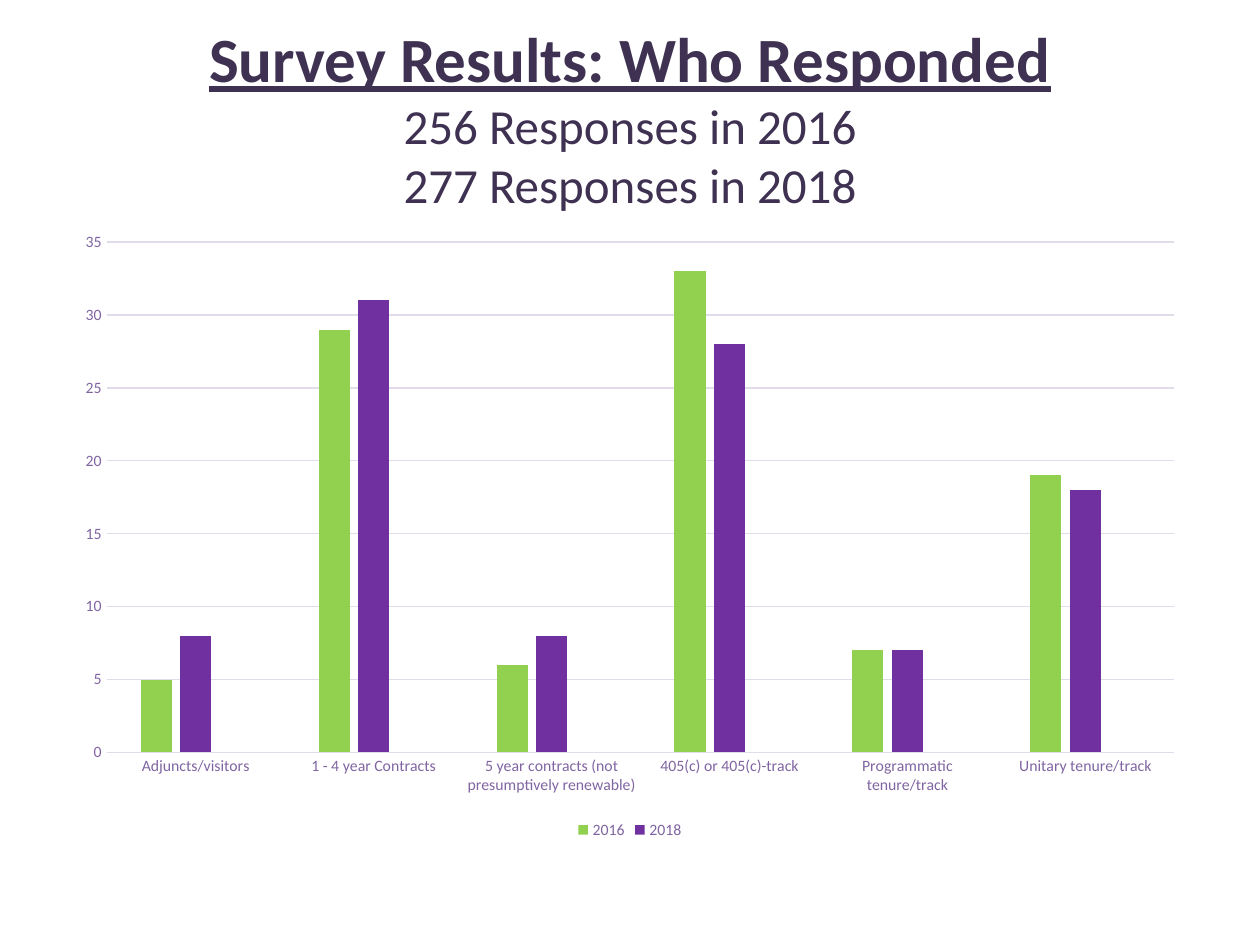
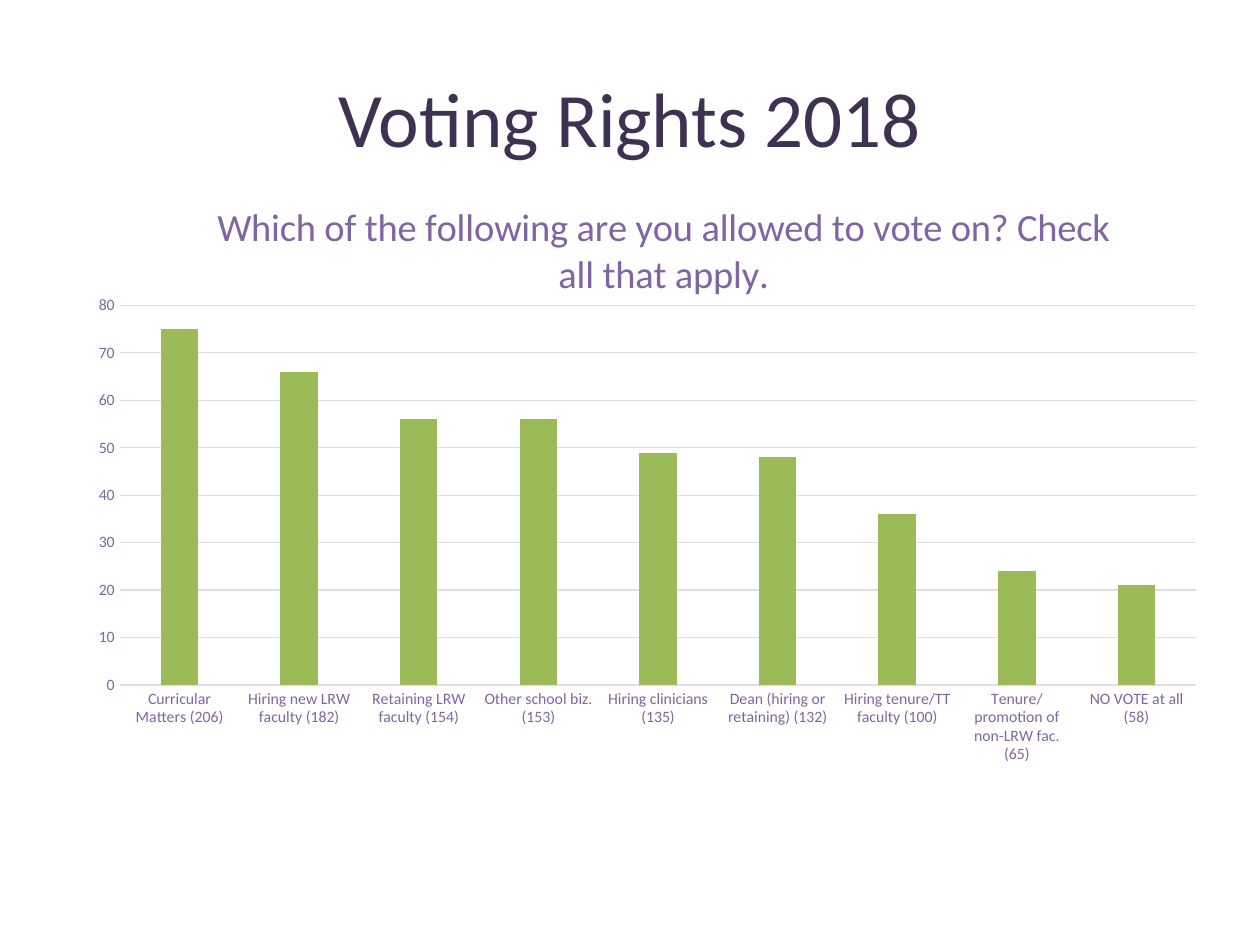
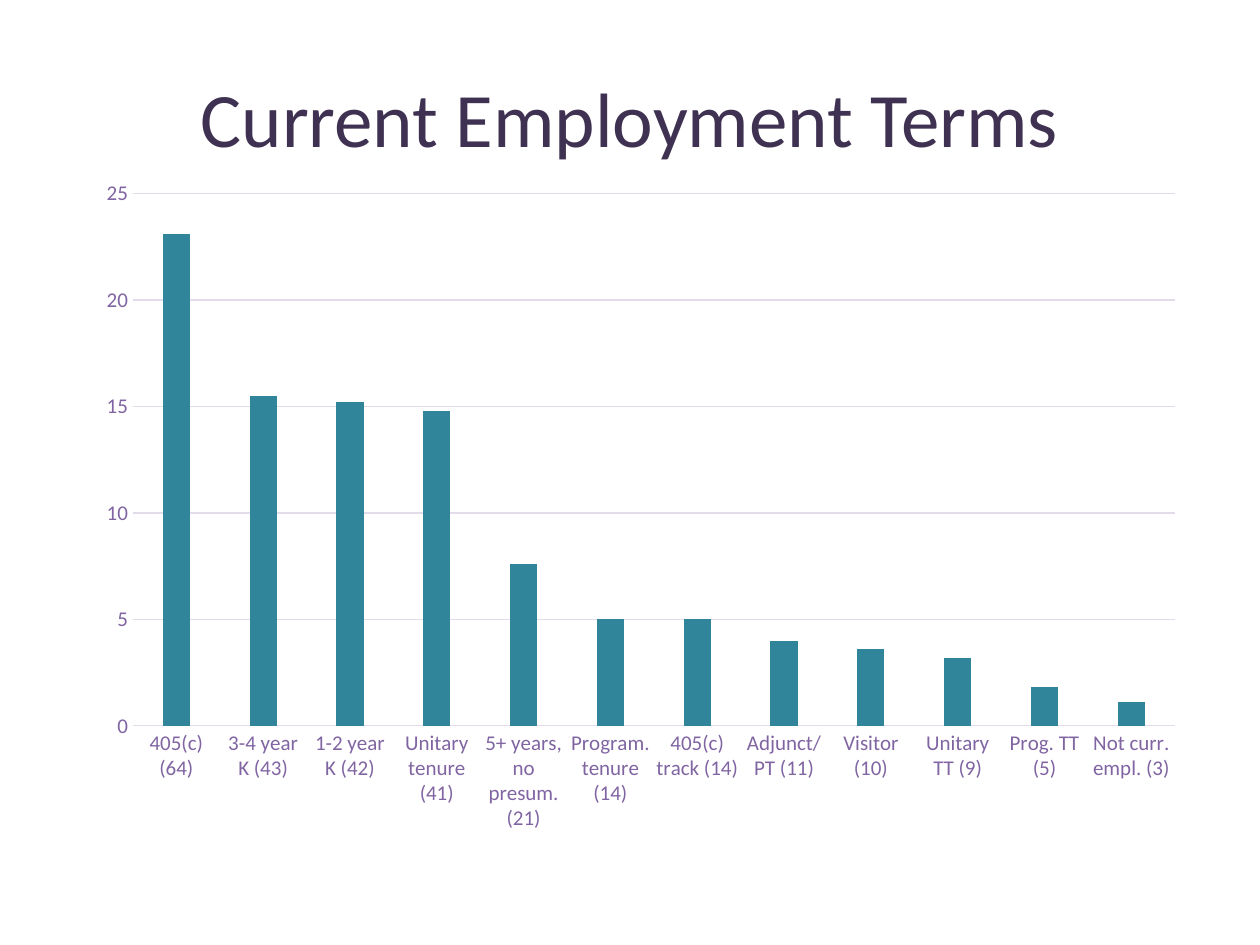
from pptx import Presentation
from pptx.chart.data import CategoryChartData as Data
from pptx.dml.color import RGBColor
from pptx.enum.chart import XL_CHART_TYPE as Kind, XL_LEGEND_POSITION as Place
from pptx.enum.chart import XL_TICK_MARK as Tick
from pptx.enum.text import MSO_ANCHOR, MSO_AUTO_SIZE, PP_ALIGN
from pptx.oxml import parse_xml
from pptx.oxml.ns import nsdecls
from pptx.util import Pt

# Shared look
FACE = "Calibri"
DARK, MID, PALE = "3F3151", "8065A2", "E2DBEA"


def color(hex):
    return RGBColor.from_string(hex)


def style(font, size, hex):
    font.name, font.size = FACE, Pt(size)
    font.color.rgb = color(hex)
    font.bold = False


# Slide contents: box in points, series as (name, colour, values)
pages = [
    dict(
        title="Survey Results: Who Responded\v256 Responses in 2016\v277 Responses in 2018",
        size=28, box=(36, 126, 648, 356.4), label=9, top=35, step=5,
        cats=["Adjuncts/visitors", "1 - 4 year Contracts",
              "5 year contracts (not presumptively renewable)",
              "405(c) or 405(c)-track", "Programmatic tenure/track",
              "Unitary tenure/track"],
        series=[("2016", "92D050", [5, 29, 6, 33, 7, 19]),
                ("2018", "7030A0", [8, 31, 8, 28, 7, 18]),
                ("Series 3", "9BBB59", [None] * 6)]),
    dict(
        title="Voting Rights 2018",
        size=44, box=(36, 102.24, 648, 401.76), label=9, top=80, step=10,
        cats=["Curricular Matters (206)", "Hiring new LRW faculty (182)",
              "Retaining LRW faculty (154)", "Other school biz. (153)",
              "Hiring clinicians (135)", "Dean (hiring or retaining) (132)",
              "Hiring tenure/TT faculty (100)",
              "Tenure/promotion of non-LRW fac. (65)", "NO VOTE at all (58)"],
        series=[("Series 1", "9BBB59", [75, 66, 56, 56, 49, 48, 36, 24, 21])]),
    dict(
        title="Current Employment Terms",
        size=44, box=(48.24, 95.76, 635.76, 386.64), label=12, top=25, step=5,
        cats=["405(c) (64)", "3-4 year K (43)", "1-2 year K (42)",
              "Unitary tenure (41)", "5+ years, no presum. (21)",
              "Program. tenure (14)", "405(c) track (14)", "Adjunct/PT (11)",
              "Visitor (10)", "Unitary TT (9)", "Prog. TT (5)",
              "Not curr. empl. (3)"],
        series=[("Series 1", "31859B",
                 [23.1, 15.5, 15.2, 14.8, 7.6, 5, 5, 4, 3.6, 3.2, 1.8, 1.1])]),
]

deck = Presentation()
deck.slide_width, deck.slide_height = Pt(720), Pt(540)
heads, charts = [], []

for page in pages:
    slide = deck.slides.add_slide(deck.slide_layouts[5])

    # Title
    head = slide.shapes.title
    head.left, head.top, head.width, head.height = Pt(36), Pt(21.6), Pt(648), Pt(90)
    frame = head.text_frame
    frame.text = page["title"]
    frame.auto_size = MSO_AUTO_SIZE.NONE
    frame.vertical_anchor = MSO_ANCHOR.MIDDLE
    frame.paragraphs[0].alignment = PP_ALIGN.CENTER
    for run in frame.paragraphs[0].runs:
        style(run.font, page["size"], DARK)
    heads.append(head)

    # Column chart
    data = Data()
    data.categories = page["cats"]
    for name, fill, vals in page["series"]:
        data.add_series(name, vals)
    box = [Pt(n) for n in page["box"]]
    chart = slide.shapes.add_chart(Kind.COLUMN_CLUSTERED, *box, data).chart
    style(chart.font, 10, DARK)
    chart.has_title = chart.has_legend = False
    plot = chart.plots[0]
    plot.gap_width, plot.overlap, plot.vary_by_categories = 219, -27, False
    for bars, (name, fill, vals) in zip(plot.series, page["series"]):
        bars.format.fill.solid()
        bars.format.fill.fore_color.rgb = color(fill)

    # Axes
    base, scale = chart.category_axis, chart.value_axis
    for axis in (base, scale):
        axis.major_tick_mark = axis.minor_tick_mark = Tick.NONE
        style(axis.tick_labels.font, page["label"], MID)
    scale.minimum_scale, scale.maximum_scale = 0, page["top"]
    scale.major_unit = page["step"]
    scale.format.line.fill.background()
    for line in (base.format.line, scale.major_gridlines.format.line):
        line.color.rgb = color(PALE)
        line.width = Pt(0.75)
    charts.append(chart)

# Survey: larger underlined first line
lead = heads[0].text_frame.paragraphs[0].runs[0].font
lead.size, lead.bold, lead.underline = Pt(36), True, True

# Survey: legend without the empty series
chart = charts[0]
chart.has_legend = True
key = chart.legend
key.position, key.include_in_layout = Place.BOTTOM, False
style(key.font, 9, MID)
key._element.insert(1, parse_xml(
    f'<c:legendEntry {nsdecls("c")}><c:idx val="2"/><c:delete val="1"/></c:legendEntry>'))

# Voting: chart title and fixed plot area
chart = charts[1]
chart.has_title = True
name = chart.chart_title
name.include_in_layout = False
name.text_frame.text = "Which of the following are you allowed to vote on? Check all that apply."
style(name.text_frame.paragraphs[0].runs[0].font, 22, MID)

spots = [(name._element, "", dict(x=0.13, y=0.02)),
         (chart.plots[0]._element.getparent(), '<c:layoutTarget val="inner"/>',
          dict(x=0.05, y=0.18, w=0.95, h=0.54))]
for part, target, place in spots:
    for old in part.findall("{*}layout"):
        part.remove(old)
    modes = "".join(f'<c:{k}Mode val="edge"/>' for k in "xy")
    sizes = "".join(f'<c:{k} val="{v}"/>' for k, v in place.items())
    spot = parse_xml(f'<c:layout {nsdecls("c")}><c:manualLayout>{target}{modes}{sizes}'
                     '</c:manualLayout></c:layout>')
    part.insert(0 if target else 1, spot)

deck.save("out.pptx")
